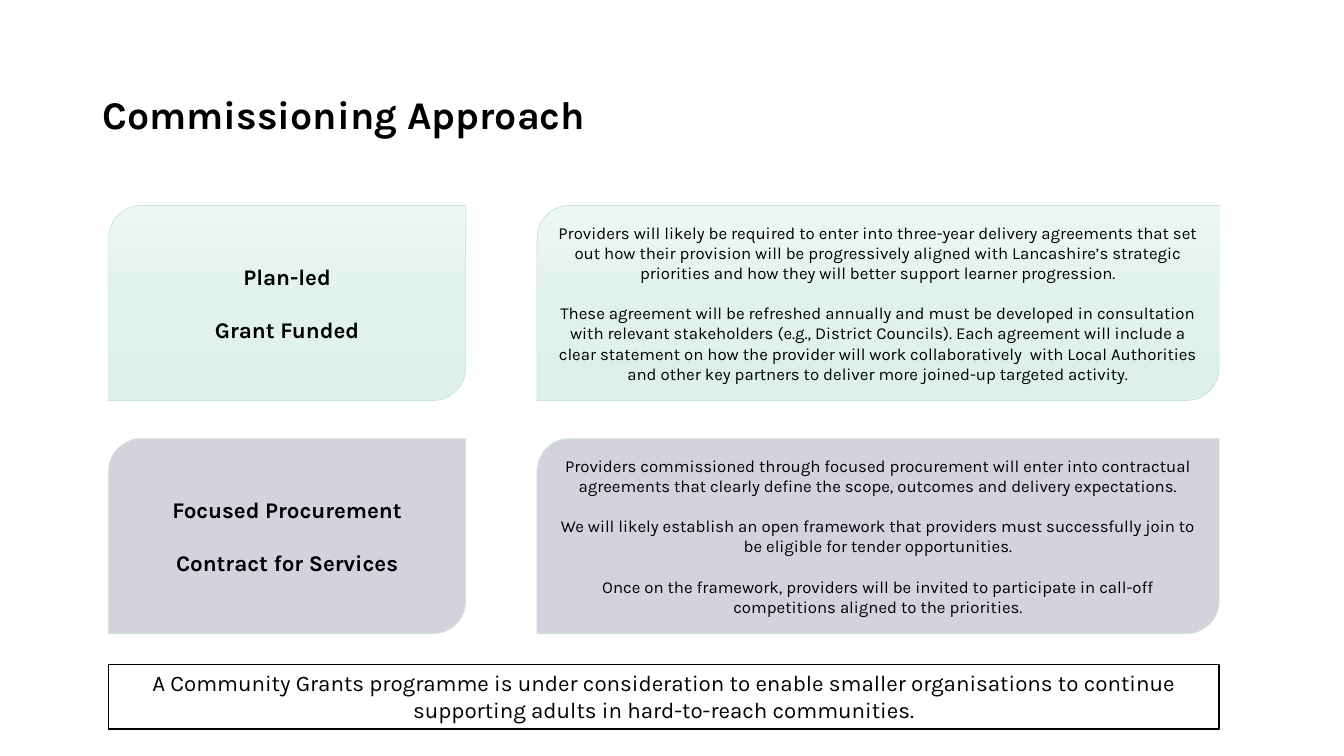
from copy import deepcopy

from pptx import Presentation
from pptx.dml.color import RGBColor
from pptx.enum.shapes import MSO_SHAPE
from pptx.enum.text import MSO_ANCHOR, MSO_AUTO_SIZE, PP_ALIGN
from pptx.oxml.ns import qn
from pptx.util import Pt

CARD = MSO_SHAPE.ROUND_2_DIAG_RECTANGLE
RECTANGLE = MSO_SHAPE.RECTANGLE
TOP, MIDDLE = MSO_ANCHOR.TOP, MSO_ANCHOR.MIDDLE
LEFT, CENTER = PP_ALIGN.LEFT, PP_ALIGN.CENTER
GROW = MSO_AUTO_SIZE.SHAPE_TO_FIT_TEXT

FONT = "Karla"
LINE_HEIGHT = 1.2
COLORS = {
    "text": "000000",
    "white": "FFFFFF",
    "card_line": "C7E4DB",
    "mint_light": "EDF7F4",
    "mint_mid": "E1F1EC",
    "mint_deep": "DDF0EA",
    "lilac": "D4D3DD",
}
MINT = ["mint_light", "mint_mid", "mint_deep"]
LILAC = ["lilac"]

APPROACHES = [
    (
        MINT,
        ["Plan-led", "Grant Funded"],
        [
            "Providers will likely be required to enter into three-year delivery agreements "
            "that set out how their provision will be progressively aligned with Lancashire’s "
            "strategic priorities and how they will better support learner progression.",
            "These agreement will be refreshed annually and must be developed in consultation "
            "with relevant stakeholders (e.g., District Councils). Each agreement will include "
            "a clear statement on how the provider will work collaboratively  with Local "
            "Authorities and other key partners to deliver more joined-up targeted activity.",
        ],
    ),
    (
        LILAC,
        ["Focused Procurement", "Contract for Services"],
        [
            "Providers commissioned through focused procurement will enter into contractual "
            "agreements that clearly define the scope, outcomes and delivery expectations.",
            "We will likely establish an open framework that providers must successfully join "
            "to be eligible for tender opportunities.",
            "Once on the framework, providers will be invited to participate in call-off "
            "competitions aligned to the priorities.",
        ],
    ),
]
COMMUNITY_GRANTS = (
    "A Community Grants programme is under consideration to enable smaller organisations "
    "to continue supporting adults in hard-to-reach communities."
)


def color(name):
    return RGBColor.from_string(COLORS[name])


def write_paragraphs(shape, texts, size, bold=False, align=CENTER, anchor=MIDDLE):
    """Fill the shape with paragraphs set one line apart."""
    frame = shape.text_frame
    frame.word_wrap = True
    frame.vertical_anchor = anchor
    for index, text in enumerate(texts):
        paragraph = frame.add_paragraph() if index else frame.paragraphs[0]
        paragraph.text = text
        paragraph.alignment = align
        if index:
            paragraph.space_before = Pt(size * LINE_HEIGHT)
        font = paragraph.font
        font.name, font.size, font.bold = FONT, Pt(size), bold
        font.color.rgb = color("text")


def fill_shape(shape, names):
    """Fill plainly with one colour, or with a downward gradient of three."""
    if len(names) == 1:
        shape.fill.solid()
        shape.fill.fore_color.rgb = color(names[0])
        return
    shape.fill.gradient()
    shape.fill.gradient_angle = 270
    stop_list = next(shape.element.iter(qn("a:gsLst")))
    stop_list.append(deepcopy(stop_list[-1]))
    for index, (stop, name) in enumerate(zip(shape.fill.gradient_stops, names)):
        stop.position = index / (len(names) - 1)
        stop.color.rgb = color(name)


def add_box(slide, kind, box, fill, line, line_width):
    shape = slide.shapes.add_shape(kind, *map(Pt, box))
    shape.shadow.inherit = False
    fill_shape(shape, fill)
    shape.line.color.rgb = color(line)
    shape.line.width = Pt(line_width)
    return shape


def add_title(slide, box, text):
    title = slide.shapes.title
    title.left, title.top, title.width, title.height = map(Pt, box)
    write_paragraphs(title, [text], 28, bold=True, align=LEFT)
    title.text_frame.auto_size = GROW


def add_approach_row(slide, box, fill, heading, details):
    left, top, width, height = box
    heading_width, detail_offset = 255, 306
    heading_box = (left, top, heading_width, height)
    detail_box = (left + detail_offset, top, width - detail_offset, height)
    heading_card = add_box(slide, CARD, heading_box, fill, "card_line", 0.5)
    write_paragraphs(heading_card, heading, 16, bold=True)
    detail_card = add_box(slide, CARD, detail_box, fill, "card_line", 0.5)
    write_paragraphs(detail_card, details, 12)


def add_grants_note(slide, box, text):
    note = add_box(slide, RECTANGLE, box, ["white"], "text", 1)
    write_paragraphs(note, [text], 16, anchor=TOP)
    note.text_frame.auto_size = GROW


def main():
    presentation = Presentation()
    presentation.slide_width, presentation.slide_height = Pt(960), Pt(540)
    slide = presentation.slides.add_slide(presentation.slide_layouts[5])

    left, width = 77.6, 793.2
    first_top, row_height, row_pitch = 146.8, 139.2, 166.5
    add_title(slide, (66, 60.5, 828, 41), "Commissioning Approach")
    for index, (fill, heading, details) in enumerate(APPROACHES):
        row_box = (left, first_top + index * row_pitch, width, row_height)
        add_approach_row(slide, row_box, fill, heading, details)
    add_grants_note(slide, (left, 474.6, width, 46), COMMUNITY_GRANTS)
    presentation.save("out.pptx")


if __name__ == "__main__":
    main()
